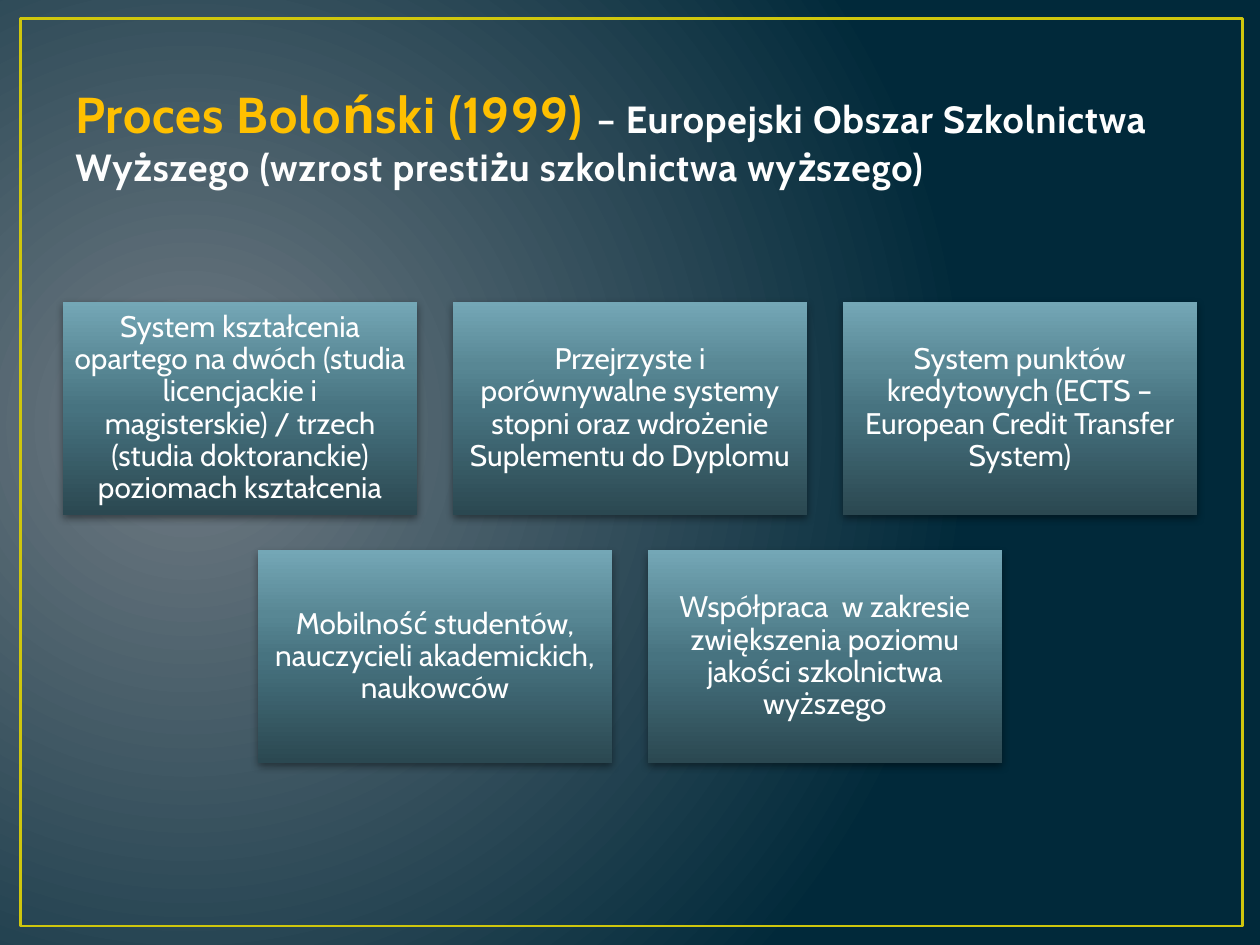
from lxml import etree
from pptx import Presentation
from pptx.dml.color import RGBColor
from pptx.enum import shapes, text
from pptx.oxml import ns
from pptx.util import Cm, Pt

GREY = RGBColor(0x71, 0x7C, 0x84)
NAVY = RGBColor(0x01, 0x29, 0x3A)
LIME = RGBColor(0xCF, 0xC6, 0x0D)
GOLD = RGBColor(0xFF, 0xC0, 0x00)
PALE = RGBColor(0xFE, 0xFE, 0xFE)
WHITE = RGBColor(0xFF, 0xFF, 0xFF)
BLACK = RGBColor(0, 0, 0)
TEAL = [
    (0, RGBColor(0x2B, 0x48, 0x51)),
    (50, RGBColor(0x47, 0x73, 0x80)),
    (70, RGBColor(0x58, 0x87, 0x94)),
    (100, RGBColor(0x74, 0xA7, 0xB6)),
]
FONT = "Cabin"

TITLE = [
    ("Proces Boloński (1999) ", 28.8, GOLD),
    ("– Europejski Obszar Szkolnictwa Wyższego (wzrost prestiżu szkolnictwa wyższego)", 21.6, PALE),
]
ROWS = [
    [
        "System kształcenia opartego na dwóch (studia licencjackie i magisterskie) / trzech (studia doktoranckie) poziomach kształcenia",
        "Przejrzyste i porównywalne systemy stopni oraz wdrożenie Suplementu do Dyplomu",
        "System punktów kredytowych (ECTS – European Credit Transfer System)",
    ],
    [
        "Mobilność studentów, nauczycieli akademickich, naukowców",
        "Współpraca  w zakresie zwiększenia poziomu jakości szkolnictwa wyższego",
    ],
]


def add(node, tag, **attrs):
    return etree.SubElement(node, ns.qn(tag), {k: str(v) for k, v in attrs.items()})


def blend(fill, node, stops):
    fill.solid()
    fill.fore_color.rgb = stops[0][1]
    old = node.find(".//" + ns.qn("a:solidFill"))
    grad = etree.Element(ns.qn("a:gradFill"), rotWithShape="1")
    row = add(grad, "a:gsLst")
    for pos, tint in stops:
        add(add(row, "a:gs", pos=pos * 1000), "a:srgbClr", val=tint)
    old.getparent().replace(old, grad)
    return grad


def shade(shape):
    shape.shadow.inherit = False
    glow = shape.element.spPr.find(ns.qn("a:effectLst"))
    drop = add(glow, "a:outerShdw", blurRad=Pt(5), dist=Pt(2), dir=5400000,
               algn="ctr", rotWithShape=0)
    add(add(drop, "a:srgbClr", val=BLACK), "a:alpha", val=43000)


def style(run, size, tint):
    run.font.name = FONT
    run.font.size = Pt(size)
    run.font.color.rgb = tint


def backdrop(slide, left, top, width, height):
    grad = blend(slide.background.fill, slide.element, [(0, GREY), (100, NAVY)])
    ring = add(grad, "a:path", path="circle")
    add(ring, "a:fillToRect", l=15000, t=50000, r=85000, b=60000)
    frame = slide.shapes.add_shape(shapes.MSO_SHAPE.RECTANGLE, left, top, width, height)
    frame.shadow.inherit = False
    frame.fill.background()
    frame.line.color.rgb = LIME
    frame.line.width = Pt(1.5)


def heading(slide, left, top, width, height):
    body = slide.shapes.add_textbox(left, top, width, height).text_frame
    body.word_wrap = True
    body.vertical_anchor = text.MSO_ANCHOR.BOTTOM
    for words, size, tint in TITLE:
        run = body.paragraphs[0].add_run()
        run.text = words
        style(run, size, tint)
        run.font.bold = True
        run.font._element.set("spc", "50")


def card(slide, words, left, top, width, height):
    shape = slide.shapes.add_shape(shapes.MSO_SHAPE.RECTANGLE, left, top, width, height)
    grad = blend(shape.fill, shape.element.spPr, TEAL)
    add(grad, "a:lin", ang=270 * 60000, scaled=0)
    shape.line.fill.background()
    shade(shape)
    body = shape.text_frame
    body.text = words
    body.word_wrap = True
    body.vertical_anchor = text.MSO_ANCHOR.MIDDLE
    body.margin_left = body.margin_right = Cm(0.18)
    body.margin_top = body.margin_bottom = Cm(0.18)
    para = body.paragraphs[0]
    para.alignment = text.PP_ALIGN.CENTER
    para.line_spacing = 0.9
    style(para.runs[0], 17, WHITE)


def cards(slide, left, top, width):
    gap = Cm(0.72)
    wide = (width - 2 * gap) // 3
    high = int(wide * 0.6)
    for i, row in enumerate(ROWS):
        span = len(row) * (wide + gap) - gap
        start = left + (width - span) // 2
        for j, words in enumerate(row):
            card(slide, words, start + j * (wide + gap), top + i * (high + gap), wide, high)


def main():
    deck = Presentation()
    deck.slide_width, deck.slide_height = Cm(25.4), Cm(19.05)
    slide = deck.slides.add_slide(deck.slide_layouts[6])
    backdrop(slide, Cm(0.41), Cm(0.38), Cm(24.64), Cm(18.29))
    heading(slide, Cm(1.27), Cm(0.76), Cm(22.86), Cm(3.18))
    cards(slide, Cm(1.27), Cm(6.09), Cm(22.86))
    deck.save("out.pptx")


if __name__ == "__main__":
    main()
